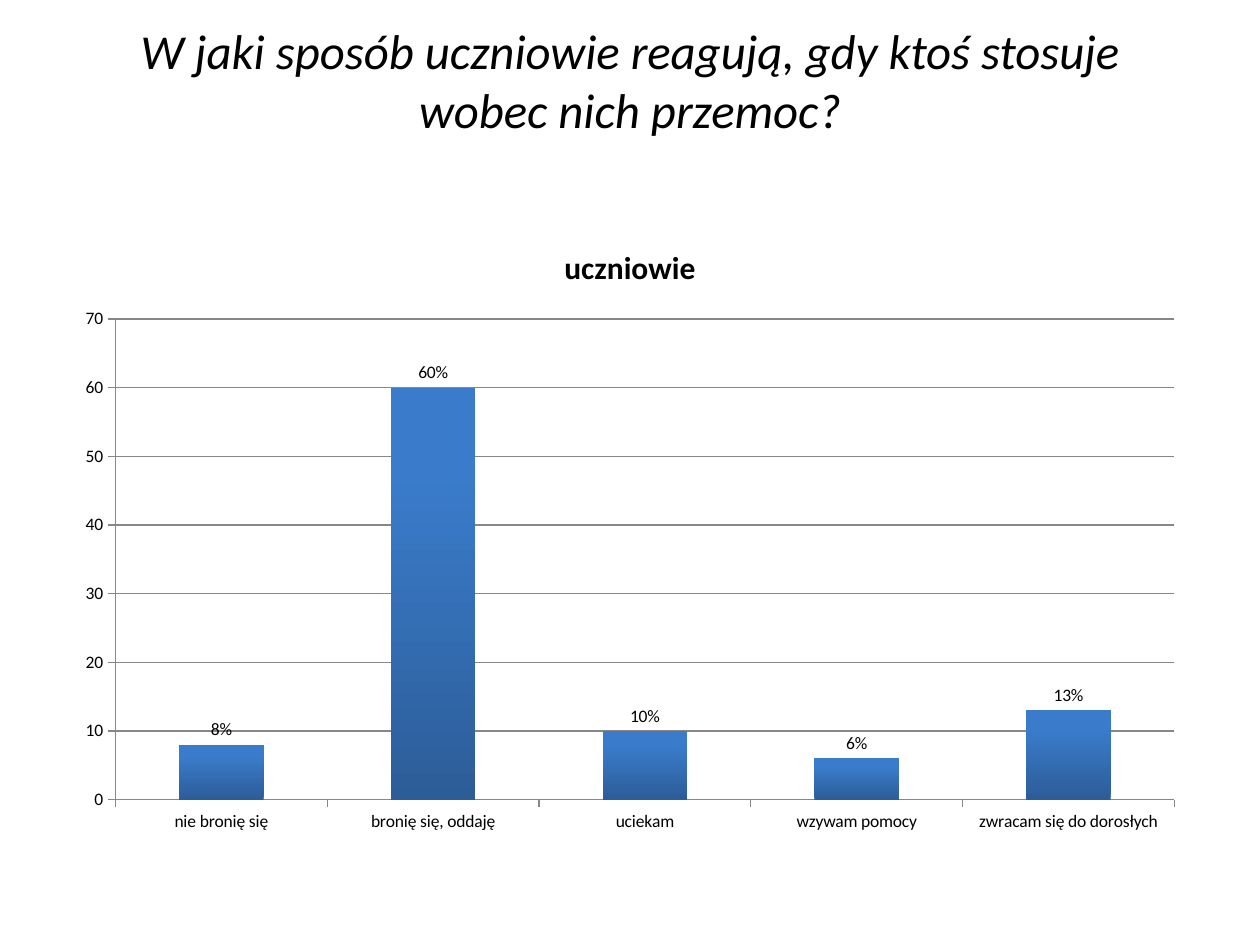
from typing import NamedTuple

from pptx import Presentation
from pptx.chart.data import CategoryChartData
from pptx.dml.color import RGBColor
from pptx.enum import chart as charts, text
from pptx.util import Inches, Pt

FONT = "Calibri"
COLORS = {
    "text": "000000",
    "line": "878787",
    "bar_bottom": "2C5D98",
    "bar_top": "3A7CCB",
}


class Answer(NamedTuple):
    label: str
    percent: int


ANSWERS = [
    Answer("nie bronię się", 8),
    Answer("bronię się, oddaję", 60),
    Answer("uciekam", 10),
    Answer("wzywam pomocy", 6),
    Answer("zwracam się do dorosłych", 13),
]


def color(name: str) -> RGBColor:
    return RGBColor.from_string(COLORS[name])


def format_font(font, *, size: float, bold: bool = False, italic: bool = False) -> None:
    font.name = FONT
    font.size = Pt(size)
    font.bold = bold
    font.italic = italic
    font.color.rgb = color("text")


def write_text(frame, content: str, **font_format) -> None:
    frame.text = content
    paragraph = frame.paragraphs[0]
    paragraph.alignment = text.PP_ALIGN.CENTER
    format_font(paragraph.runs[0].font, **font_format)


def add_title(slide) -> None:
    title = slide.shapes.title
    title.left, title.top = Inches(0.5), Inches(0.3)
    title.width, title.height = Inches(9), Inches(1.25)
    frame = title.text_frame
    write_text(
        frame,
        "W jaki sposób uczniowie reagują, gdy ktoś stosuje wobec nich przemoc?",
        size=27.9,
        italic=True,
    )
    frame.word_wrap = True
    frame.auto_size = text.MSO_AUTO_SIZE.NONE
    frame.vertical_anchor = text.MSO_ANCHOR.MIDDLE
    # The deep bottom margin lifts the two lines above the middle of the box.
    frame.margin_bottom = Inches(0.64)


def style_axis(axis) -> None:
    axis.format.line.color.rgb = color("line")
    axis.format.line.width = Pt(0.75)
    axis.major_tick_mark = charts.XL_TICK_MARK.OUTSIDE
    axis.minor_tick_mark = charts.XL_TICK_MARK.NONE


def style_bars(plot) -> None:
    plot.gap_width = 150
    plot.vary_by_categories = False
    fill = plot.series[0].format.fill
    fill.gradient()
    fill.gradient_angle = 90
    stops = (("bar_bottom", 0), ("bar_top", 0.8))
    for stop, (name, position) in zip(fill.gradient_stops, stops):
        stop.color.rgb = color(name)
        stop.position = position

    plot.has_data_labels = True
    labels = plot.data_labels
    labels.show_value = True
    labels.number_format = '0"%"'
    labels.number_format_is_linked = False
    labels.position = charts.XL_LABEL_POSITION.OUTSIDE_END
    format_font(labels.font, size=10)


def add_answer_chart(slide, answers: list[Answer]) -> None:
    data = CategoryChartData()
    data.categories = [answer.label for answer in answers]
    data.add_series("uczniowie", [answer.percent for answer in answers])
    chart = slide.shapes.add_chart(
        charts.XL_CHART_TYPE.COLUMN_CLUSTERED,
        Inches(0.5), Inches(1.75), Inches(9), Inches(4.95), data,
    ).chart
    format_font(chart.font, size=10)
    chart.has_legend = False
    chart.has_title = True
    write_text(chart.chart_title.text_frame, "uczniowie", size=18, bold=True)

    for axis in (chart.category_axis, chart.value_axis):
        style_axis(axis)
    values = chart.value_axis
    values.minimum_scale, values.maximum_scale, values.major_unit = 0, 70, 10
    values.has_major_gridlines = True
    gridline = values.major_gridlines.format.line
    gridline.color.rgb = color("line")
    gridline.width = Pt(0.75)
    style_bars(chart.plots[0])


def main() -> None:
    presentation = Presentation()
    presentation.slide_width = Inches(10)
    presentation.slide_height = Inches(7.5)
    title_only = presentation.slide_layouts[5]
    slide = presentation.slides.add_slide(title_only)
    add_title(slide)
    add_answer_chart(slide, ANSWERS)
    presentation.save("out.pptx")


if __name__ == "__main__":
    main()
